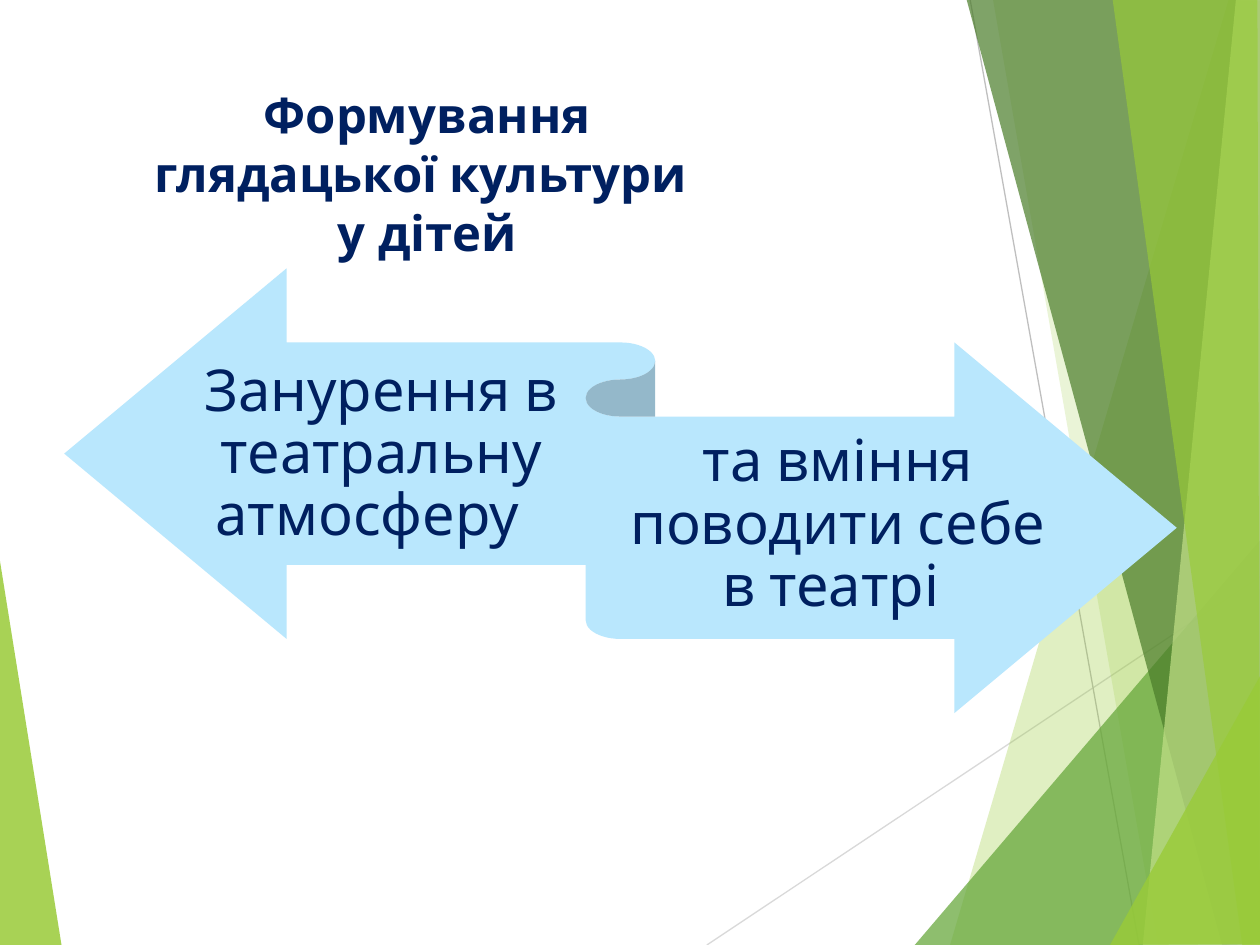
from lxml import etree
from pptx import Presentation
from pptx.dml.color import RGBColor
from pptx.enum.shapes import MSO_CONNECTOR, MSO_SHAPE
from pptx.enum.text import MSO_ANCHOR, MSO_AUTO_SIZE, PP_ALIGN
from pptx.oxml.ns import qn
from pptx.util import Inches, Pt

LIME = RGBColor(0x99, 0xCB, 0x38)
GREEN = RGBColor(0x63, 0xA5, 0x37)
DARK_GREEN = RGBColor(0x4A, 0x7C, 0x29)
PALE_LIME = RGBColor(0xC2, 0xE0, 0x88)
GREY = RGBColor(0xBF, 0xBF, 0xBF)
LIGHT_GREY = RGBColor(0xD9, 0xD9, 0xD9)
SKY = RGBColor(0xB9, 0xE7, 0xFD)
NAVY = RGBColor(0x00, 0x20, 0x60)
FONT = "Karla"


def add_facet(s, points, color, alpha):
    pts = [(Inches(x), Inches(y)) for x, y in points]
    fb = s.shapes.build_freeform(*pts[0], scale=1.0)
    fb.add_line_segments(pts[1:], close=True)
    sp = fb.convert_to_shape()
    sp.shadow.inherit = False
    sp.line.fill.background()
    sp.fill.solid()
    sp.fill.fore_color.rgb = color
    clr = sp._element.spPr.find(qn("a:solidFill"))[0]
    etree.SubElement(clr, qn("a:alpha")).set("val", str(alpha * 1000))


def style_text(tf, size, bold):
    for p in tf.paragraphs:
        p.alignment = PP_ALIGN.CENTER
        for r in p.runs:
            r.font.name = FONT
            r.font.size = Pt(size)
            r.font.bold = bold
            r.font.color.rgb = NAVY


prs = Presentation()
prs.slide_width = Inches(10)
prs.slide_height = Inches(7.5)
s = prs.slides.add_slide(prs.slide_layouts[5])

add_facet(s, [(-0.01, 4.39), (0.49, 7.51), (-0.01, 7.5)], LIME, 85)

for x1, y1, x2, y2, color in [
    (5.61, 7.5, 10.01, 4.57, LIGHT_GREY),
    (7.7, 0, 9.04, 7.5, GREY),
]:
    ln = s.shapes.add_connector(
        MSO_CONNECTOR.STRAIGHT, Inches(x1), Inches(y1), Inches(x2), Inches(y2))
    ln.line.color.rgb = color
    ln.line.width = Pt(0.75)
    etree.SubElement(ln._element.spPr, qn("a:effectLst"))

for points, color, alpha in [
    ([(9.75, 0), (7.54, 7.5), (10.02, 7.51), (10.01, 0.01)], LIME, 30),
    ([(7.88, -0.01), (9.19, 7.5), (10.01, 7.5), (10.01, -0.01)], LIME, 20),
    ([(7.26, 7.5), (10, 4.29), (10.01, 7.5)], GREEN, 72),
    ([(7.67, -0.01), (9.7, 7.5), (10.01, 7.49), (10.01, -0.01)], DARK_GREEN, 70),
    ([(9.81, -0.01), (9.07, 7.5), (10.01, 7.5), (10, -0.01)], PALE_LIME, 70),
    ([(8.83, -0.01), (9.86, 7.5), (10, 7.5), (9.98, -0.01)], LIME, 65),
    ([(8.81, 7.5), (10.01, 5.35), (10.01, 7.49)], LIME, 80),
]:
    add_facet(s, points, color, alpha)

ribbon = s.shapes.add_shape(
    MSO_SHAPE.LEFT_RIGHT_RIBBON, Inches(0.51), Inches(2.13), Inches(8.83), Inches(3.53))
ribbon.shadow.inherit = False
ribbon.fill.solid()
ribbon.fill.fore_color.rgb = SKY
ribbon.line.fill.background()

for left, top, width, text in [
    (1.57, 2.75, 2.91, "Занурення в театральну атмосферу  "),
    (4.93, 3.31, 3.44, "та вміння поводити себе в театрі "),
]:
    tb = s.shapes.add_textbox(Inches(left), Inches(top), Inches(width), Inches(1.73))
    tf = tb.text_frame
    tf.word_wrap = True
    tf.vertical_anchor = MSO_ANCHOR.MIDDLE
    tf.margin_left = tf.margin_right = 0
    tf.margin_top, tf.margin_bottom = Inches(0.13), Inches(0.14)
    tf.text = text
    tf.paragraphs[0].line_spacing = 0.9
    style_text(tf, 33, False)

title = s.shapes.title
title.left, title.top = Inches(0.83), Inches(0.15)
title.width, title.height = Inches(6.76), Inches(1.51)
tf = title.text_frame
tf.word_wrap = True
tf.auto_size = MSO_AUTO_SIZE.NONE
tf.vertical_anchor = MSO_ANCHOR.TOP
tf.margin_top, tf.margin_right = Inches(0.52), Inches(1.74)
tf.text = "Формування глядацької культури \nу дітей"
style_text(tf, 28, True)

prs.save("out.pptx")
